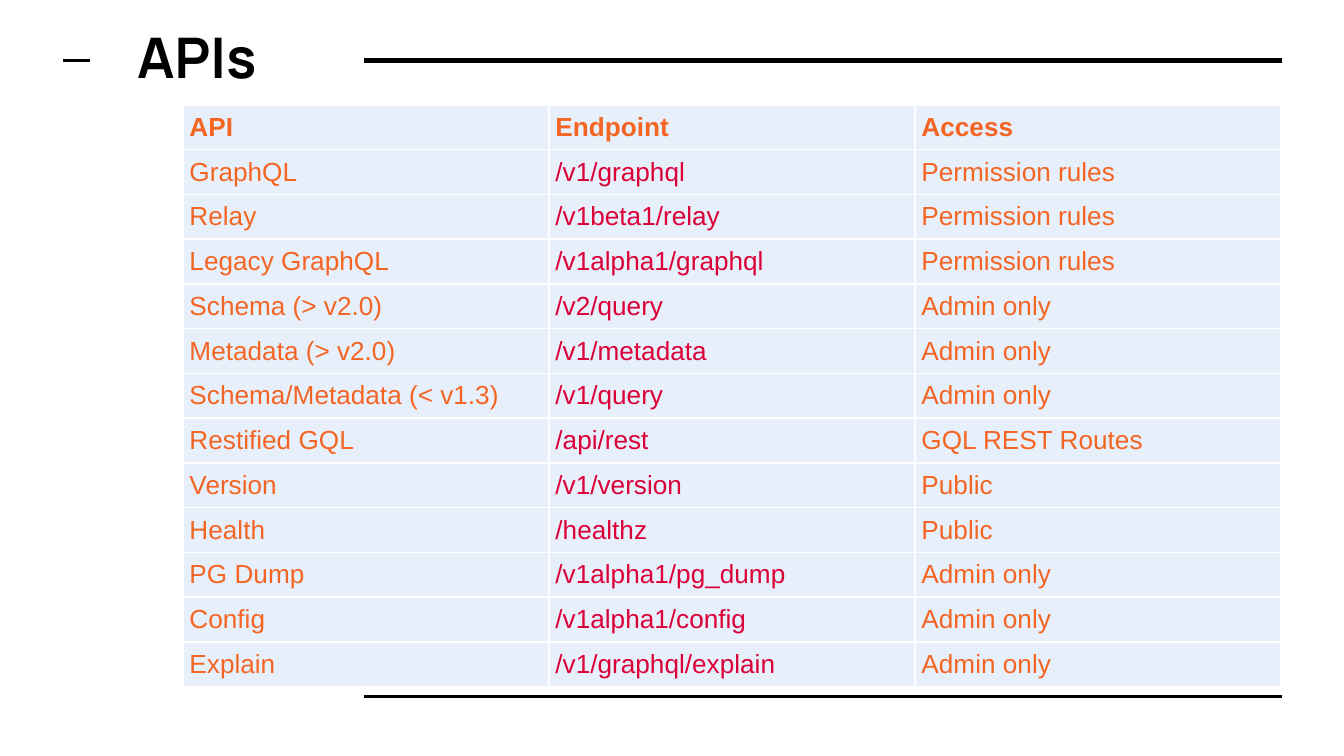
from dataclasses import dataclass

import pptx
import pptx.dml.color
import pptx.enum.shapes
import pptx.enum.text
import pptx.oxml
import pptx.oxml.ns
import pptx.util
from pptx.util import Inches


@dataclass(frozen=True)
class Theme:
    black: str = "000000"
    white: str = "FFFFFF"
    orange: str = "F46524"
    crimson: str = "DB0037"
    cell: str = "E7EFFB"
    title_font: str = "Manrope"
    body_font: str = "Arial"
    title_size: float = 30
    body_size: float = 14
    border: float = 1


@dataclass(frozen=True)
class Rule:
    left: float
    right: float
    y: float
    weight: float


@dataclass(frozen=True)
class Api:
    name: str
    endpoint: str
    access: str


THEME = Theme()

RULES = [
    Rule(2.71, 9.54, 0.45, 3),
    Rule(2.71, 9.54, 5.18, 1.5),
    Rule(0.47, 0.67, 0.45, 1.5),
]

HEADER = Api("API", "Endpoint", "Access")
APIS = [
    Api("GraphQL", "/v1/graphql", "Permission rules"),
    Api("Relay", "/v1beta1/relay", "Permission rules"),
    Api("Legacy GraphQL", "/v1alpha1/graphql", "Permission rules"),
    Api("Schema (> v2.0)", "/v2/query", "Admin only"),
    Api("Metadata (> v2.0)", "/v1/metadata", "Admin only"),
    Api("Schema/Metadata (< v1.3)", "/v1/query", "Admin only"),
    Api("Restified GQL", "/api/rest", "GQL REST Routes"),
    Api("Version", "/v1/version", "Public"),
    Api("Health", "/healthz", "Public"),
    Api("PG Dump", "/v1alpha1/pg_dump", "Admin only"),
    Api("Config", "/v1alpha1/config", "Admin only"),
    Api("Explain", "/v1/graphql/explain", "Admin only"),
]


def rgb(value: str) -> pptx.dml.color.RGBColor:
    return pptx.dml.color.RGBColor.from_string(value)


def style_paragraph(p, font: str, size: float, color: str, bold: bool) -> None:
    p.font.name = font
    p.font.size = pptx.util.Pt(size)
    p.font.bold = bold
    p.font.color.rgb = rgb(color)


def draw_rule(slide, rule: Rule) -> None:
    line = slide.shapes.add_connector(
        pptx.enum.shapes.MSO_CONNECTOR.STRAIGHT,
        Inches(rule.left), Inches(rule.y), Inches(rule.right), Inches(rule.y),
    )
    line.line.color.rgb = rgb(THEME.black)
    line.line.width = pptx.util.Pt(rule.weight)
    line._element.spPr.append(pptx.oxml.parse_xml(
        f'<a:effectLst {pptx.oxml.ns.nsdecls("a")}/>'))


def draw_title(slide, text: str) -> None:
    title = slide.shapes.title
    title.left, title.top = Inches(0.92), Inches(0.07)
    title.width, title.height = Inches(1.44), Inches(0.69)
    tf = title.text_frame
    tf.text = text
    tf.auto_size = pptx.enum.text.MSO_AUTO_SIZE.NONE
    tf.vertical_anchor = pptx.enum.text.MSO_ANCHOR.MIDDLE
    tf.margin_left = tf.margin_right = Inches(0.1)
    tf.margin_top = tf.margin_bottom = Inches(0.1)
    p = tf.paragraphs[0]
    p.alignment = pptx.enum.text.PP_ALIGN.LEFT
    style_paragraph(p, THEME.title_font, THEME.title_size, THEME.black, True)


def add_borders(cell) -> None:
    """Insert the edges ahead of the fill, as the schema requires."""
    width = pptx.util.Pt(THEME.border)
    for i, edge in enumerate(("lnL", "lnR", "lnT", "lnB")):
        cell._tc.get_or_add_tcPr().insert(i, pptx.oxml.parse_xml(
            f'<a:{edge} {pptx.oxml.ns.nsdecls("a")} w="{width}"><a:solidFill>'
            f'<a:srgbClr val="{THEME.white}"/></a:solidFill></a:{edge}>'))


def draw_cell(cell, text: str, color: str, bold: bool) -> None:
    cell.text = text
    cell.vertical_anchor = pptx.enum.text.MSO_ANCHOR.MIDDLE
    cell.margin_left = cell.margin_right = Inches(0.05)
    cell.margin_top = cell.margin_bottom = Inches(0.05)
    cell.fill.solid()
    cell.fill.fore_color.rgb = rgb(THEME.cell)
    add_borders(cell)
    style_paragraph(cell.text_frame.paragraphs[0], THEME.body_font,
                    THEME.body_size, color, bold)


def draw_api_table(slide, header: Api, apis: list[Api]) -> None:
    rows = [header, *apis]
    table = slide.shapes.add_table(
        len(rows), 3, Inches(1.36), Inches(0.78), Inches(8.17), Inches(4.33)
    ).table
    for i, api in enumerate(rows):
        is_header = i == 0
        endpoint_color = THEME.orange if is_header else THEME.crimson
        draw_cell(table.cell(i, 0), api.name, THEME.orange, is_header)
        draw_cell(table.cell(i, 1), api.endpoint, endpoint_color, is_header)
        draw_cell(table.cell(i, 2), api.access, THEME.orange, is_header)


def main() -> None:
    prs = pptx.Presentation()
    prs.slide_width = Inches(10)
    prs.slide_height = prs.slide_width * 9 // 16
    slide = prs.slides.add_slide(prs.slide_layouts.get_by_name("Title Only"))
    for rule in RULES:
        draw_rule(slide, rule)
    draw_title(slide, "APIs")
    draw_api_table(slide, HEADER, APIS)
    prs.save("out.pptx")


if __name__ == "__main__":
    main()
